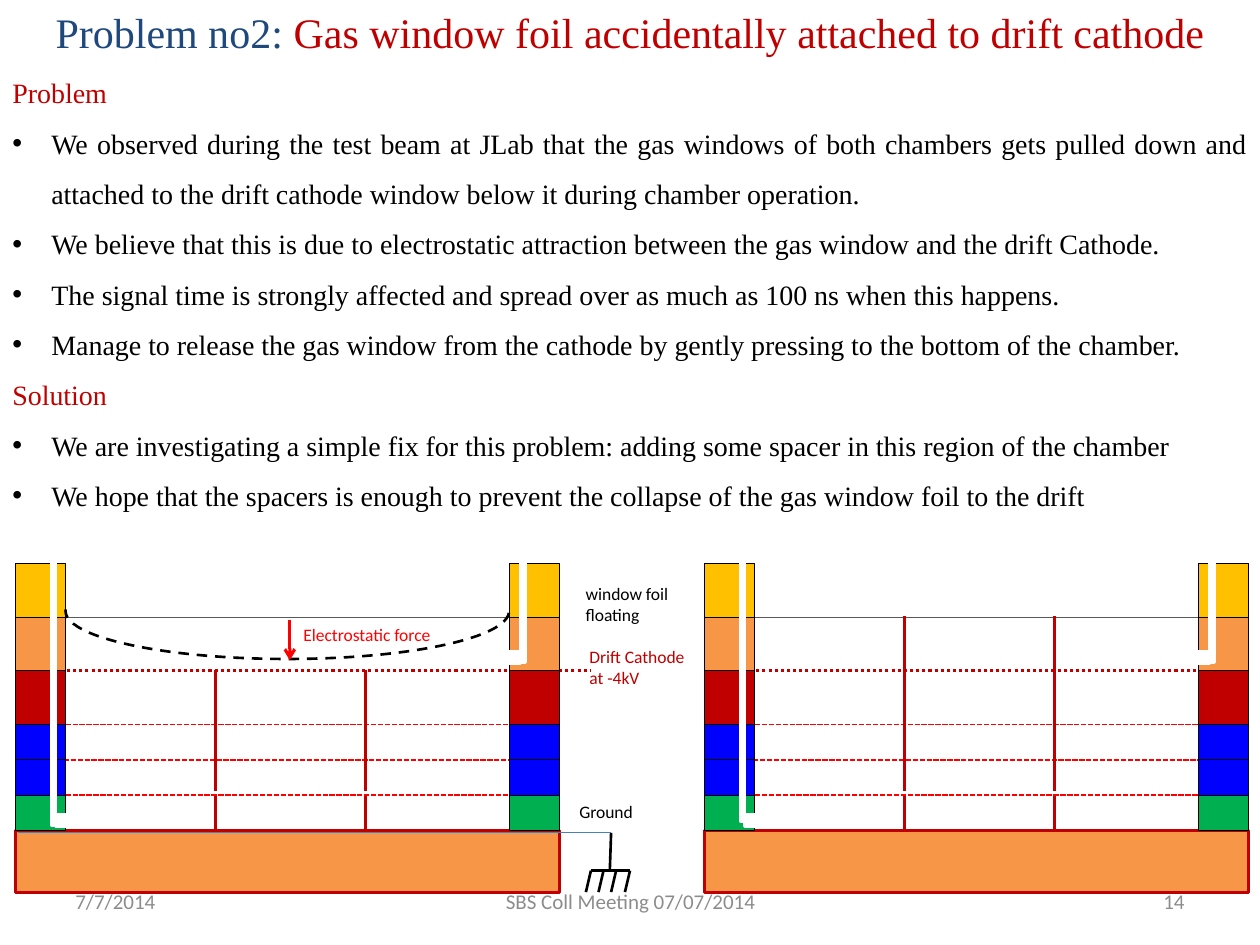
from lxml import etree
from pptx import Presentation
from pptx.dml.color import RGBColor
from pptx.enum.dml import MSO_LINE
from pptx.enum.shapes import MSO_CONNECTOR, MSO_SHAPE
from pptx.enum.text import MSO_ANCHOR, MSO_AUTO_SIZE, PP_ALIGN
from pptx.oxml.ns import qn
from pptx.util import Inches, Pt

STRAIGHT = MSO_CONNECTOR.STRAIGHT
RECTANGLE, ARC = MSO_SHAPE.RECTANGLE, MSO_SHAPE.ARC
DASH, SHORT_DASH, DOT = MSO_LINE.DASH, MSO_LINE.SQUARE_DOT, MSO_LINE.ROUND_DOT
TOP, MIDDLE = MSO_ANCHOR.TOP, MSO_ANCHOR.MIDDLE
GROW, FIXED = MSO_AUTO_SIZE.SHAPE_TO_FIT_TEXT, MSO_AUTO_SIZE.NONE
LEFT, CENTER, RIGHT, JUSTIFY = PP_ALIGN.LEFT, PP_ALIGN.CENTER, PP_ALIGN.RIGHT, PP_ALIGN.JUSTIFY

COLUMNS, ROWS = 100, 75
SERIF, SANS = "Times New Roman", "Calibri"
BLACK, WHITE, RED, CRIMSON = "000000", "FFFFFF", "FF0000", "C00000"
NAVY, GRAY, ORANGE, BLUE = "1F497D", "8C8C8C", "F79646", "0000FF"

LAYER_EDGES = [44.7, 49, 53.2, 57.5, 60.3, 63.1, 65.9]
LAYER_COLORS = ["FFC000", ORANGE, CRIMSON, BLUE, BLUE, "00B050"]
FRAME_WIDTH, CHAMBER_WIDTH = 4, 43.2
SPACER_COLUMNS = [15.9, 27.8]
SPACER_ROWS = [(63.2, 66), (60, 62.8), (57.5, 60.3), (53.2, 57.5)]
WINDOW_SPACER = (48.9, 53.2)

SECTIONS = {
    "Problem": [
        "We observed during the test beam at JLab that the gas windows of both chambers gets "
        "pulled down and attached to the drift cathode window below it during chamber operation.",
        "We believe that this is due to electrostatic attraction between the gas window and the drift Cathode.",
        "The signal time is strongly affected and spread over as much as 100 ns when this happens.",
        "Manage to release the gas window from the cathode by gently pressing to the bottom of the chamber.",
    ],
    "Solution": [
        "We are investigating a simple fix for this problem: adding some spacer in this region of the chamber",
        "We hope that the spacers is enough to prevent the collapse of the gas window foil to the drift",
    ],
}


def color(value):
    return RGBColor.from_string(value)


class SlideBuilder:
    def __init__(self, presentation):
        self.slide = presentation.slides.add_slide(presentation.slide_layouts[5])
        self.shapes = self.slide.shapes
        self.cell_width = presentation.slide_width / COLUMNS
        self.cell_height = presentation.slide_height / ROWS

    def place(self, x, y, width, height):
        return [round(x * self.cell_width), round(y * self.cell_height),
                round(width * self.cell_width), round(height * self.cell_height)]

    def start_group(self):
        self.shapes = self.slide.shapes.add_group_shape().shapes

    def end_group(self):
        self.shapes = self.slide.shapes

    def format_run(self, run, size, ink, font):
        run.font.size, run.font.name = Pt(size), font
        run.font.color.rgb = color(ink)

    def title(self, box, parts):
        shape = self.slide.shapes.title
        shape.left, shape.top, shape.width, shape.height = self.place(*box)
        frame = shape.text_frame
        frame.auto_size, frame.vertical_anchor = GROW, TOP
        paragraph = frame.paragraphs[0]
        paragraph.alignment = CENTER
        for text, ink in parts:
            run = paragraph.add_run()
            run.text = text
            self.format_run(run, 24, ink, SERIF)

    def text(self, box, text, size, ink, font=SANS, align=LEFT, anchor=TOP, fit=GROW):
        frame = self.shapes.add_textbox(*self.place(*box)).text_frame
        frame.word_wrap, frame.auto_size, frame.vertical_anchor = True, fit, anchor
        frame.text = text
        for paragraph in frame.paragraphs:
            paragraph.alignment = align
            self.format_run(paragraph.runs[0], size, ink, font)
        return frame

    def sections(self, box, sections):
        lines = [line for heading, points in sections.items() for line in [heading, *points]]
        frame = self.text(box, "\n".join(lines), 16, BLACK, SERIF, JUSTIFY)
        for paragraph in frame.paragraphs:
            paragraph.line_spacing = 1.5
            if paragraph.text in sections:
                paragraph.runs[0].font.color.rgb = color(CRIMSON)
            else:
                self.bullet(paragraph)

    def bullet(self, paragraph):
        properties = paragraph._p.get_or_add_pPr()
        properties.set("marL", str(Inches(0.31)))
        properties.set("indent", str(-Inches(0.31)))
        etree.SubElement(properties, qn("a:buFont"), typeface="Arial")
        etree.SubElement(properties, qn("a:buChar"), char="•")

    def outline(self, shape, ink, weight, dash=None):
        shape.line.color.rgb = color(ink)
        shape.line.width = Pt(weight)
        if dash:
            shape.line.dash_style = dash

    def rectangle(self, box, fill, ink=BLACK, weight=0.5):
        shape = self.shapes.add_shape(RECTANGLE, *self.place(*box))
        shape.shadow.inherit = False
        shape.fill.solid()
        shape.fill.fore_color.rgb = color(fill)
        self.outline(shape, ink, weight)

    def sagging_foil(self, box):
        shape = self.shapes.add_shape(ARC, *self.place(*box))
        shape.shadow.inherit = False
        shape.rotation = 180
        shape.adjustments[0], shape.adjustments[1] = 108.275, 0.265
        shape.fill.background()
        self.outline(shape, BLACK, 1.5, DASH)

    def line(self, start, end, ink, weight, dash=None, arrow=False):
        ends = self.place(*start, *end)
        connector = self.shapes.add_connector(STRAIGHT, *ends)
        self.outline(connector, ink, weight, dash)
        if arrow:
            etree.SubElement(connector.line._get_or_add_ln(), qn("a:tailEnd"), type="arrow")
        etree.SubElement(connector._element.spPr, qn("a:effectLst"))

    def chamber(self, left, cathode_end, tube, spacer_rows):
        for start, end, y, *style in [
            (0.7, 42.9, 57.5, RED, 1, SHORT_DASH),
            (0.7, cathode_end, 53.2, CRIMSON, 1.75, DOT),
            (0.7, 42.9, 63.1, RED, 1, SHORT_DASH),
            (0, 42.2, 60.3, RED, 1, SHORT_DASH),
            (0, 42.2, 49, "595959", 0.75),
        ]:
            self.line((left + start, y), (left + end, y), *style)
        self.rectangle((left, 65.9, CHAMBER_WIDTH, 4.9), ORANGE, CRIMSON, 1.75)
        for x in (left + CHAMBER_WIDTH - FRAME_WIDTH, left):
            for top, bottom, fill in zip(LAYER_EDGES, LAYER_EDGES[1:], LAYER_COLORS):
                self.rectangle((x, top, FRAME_WIDTH, bottom - top), fill)
        for x, y, width, height in [tube, (3.2, 64.7, 1, 0.9), (39.1, 51.7, 1, 0.9), (40.1, 43.5, 0.4, 9.1)]:
            self.rectangle((left + x, y, width, height), WHITE, WHITE, 2)
        for top, bottom in spacer_rows:
            for x in SPACER_COLUMNS:
                self.line((left + x, top), (left + x, bottom), CRIMSON, 1.75)

    def ground(self):
        self.line((1.4, 66.1), (48.5, 66.1), "4B7EBC", 0.75)
        self.line((48.5, 66.1), (48.4, 69.1), BLACK, 1.5)
        self.line((46.9, 69.1), (50, 69.1), BLACK, 1.5)
        for x in (46.9, 47.9, 48.9, 50):
            self.line((x, 69.1), (x - 0.4, 70.8), BLACK, 1.5)


def main():
    presentation = Presentation()
    presentation.slide_width, presentation.slide_height = Inches(10), Inches(7.5)
    builder = SlideBuilder(presentation)

    for x, width, text, align in [
        (5, 23.3, "7/7/2014", LEFT),
        (34.2, 31.7, "SBS Coll Meeting 07/07/2014", CENTER),
        (71.7, 23.3, "14", RIGHT),
    ]:
        builder.text((x, 69.5, width, 4), text, 12, GRAY, align=align, anchor=MIDDLE, fit=FIXED)
    builder.title((0, 0, 100, 5), [
        ("Problem no2: ", NAVY),
        ("Gas window foil accidentally attached to drift cathode", CRIMSON),
    ])
    builder.sections((0, 4.2, 100, 37.4), SECTIONS)

    builder.start_group()
    builder.chamber(1.2, 45.7, (2.9, 40.8, 0.3, 24.7), SPACER_ROWS)
    builder.ground()
    builder.text((45.8, 50.8, 10, 4.4), "Drift Cathode at -4kV", 10, CRIMSON)
    builder.sagging_foil((5.2, 44.7, 35.2, 7.6))
    builder.line((23, 49.2), (23, 52.4), RED, 1.75, arrow=True)
    builder.start_group()
    builder.chamber(55.9, 42.7, (2.9, 44.2, 0.3, 21), SPACER_ROWS + [WINDOW_SPACER])
    builder.end_group()

    builder.text((45, 63.1, 6.7, 2.7), "Ground", 10, BLACK)
    builder.text((45.5, 45.8, 10.4, 4.4), "window foil\nfloating", 10, BLACK)
    builder.text((23.1, 49, 12.8, 2.7), "Electrostatic force", 10, RED)
    presentation.save("out.pptx")


if __name__ == "__main__":
    main()
